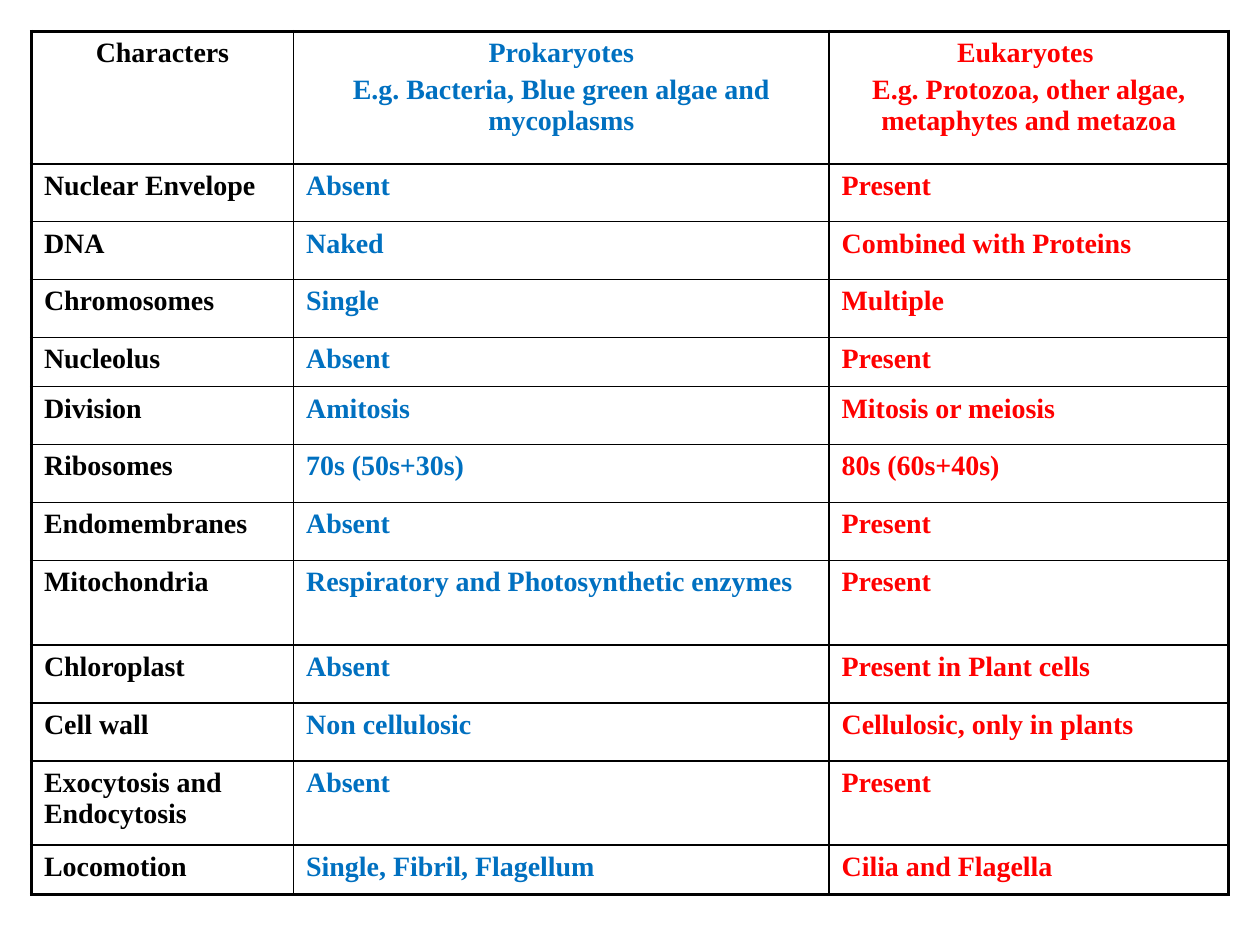
from lxml.etree import SubElement as Sub
from pptx import Presentation
from pptx.dml.color import RGBColor as Rgb
from pptx.enum.text import PP_ALIGN as Align
from pptx.oxml.ns import qn
from pptx.util import Inches, Pt

THEME = {
    "font": "Times New Roman", "size": 16, "gap": 3.2,
    "inks": ["000000", "0070C0", "FF0000"],
    "fill": "FFFFFF", "line": "000000", "thin": 1, "thick": 2.25,
}
SLIDE = (10, 7.5)
EDGE = 0.25
COLS = [2.08, 4.25, 3.17]
HEAD, MID, LOW, TALL = 1.05, 0.46, 0.39, 0.67

ROWS = [
    (HEAD, ["Characters"],
     ["Prokaryotes", "E.g. Bacteria, Blue green algae and mycoplasms"],
     ["Eukaryotes ", "E.g. Protozoa, other algae, metaphytes and metazoa"]),
    (MID, ["Nuclear Envelope"], ["Absent"], ["Present"]),
    (MID, ["DNA"], ["Naked"], ["Combined with Proteins"]),
    (MID, ["Chromosomes"], ["Single"], ["Multiple"]),
    (LOW, ["Nucleolus"], ["Absent"], ["Present"]),
    (MID, ["Division"], ["Amitosis"], ["Mitosis or meiosis"]),
    (MID, ["Ribosomes"], ["70s (50s+30s)"], ["80s (60s+40s)"]),
    (MID, ["Endomembranes"], ["Absent"], ["Present"]),
    (TALL, ["Mitochondria"], ["Respiratory and Photosynthetic enzymes"],
     ["Present"]),
    (MID, ["Chloroplast"], ["Absent"], ["Present in Plant cells"]),
    (MID, ["Cell wall"], ["Non cellulosic"], ["Cellulosic, only in plants"]),
    (TALL, ["Exocytosis and Endocytosis"], ["Absent"], ["Present"]),
    (LOW, ["Locomotion"], ["Single, Fibril, Flagellum"],
     ["Cilia and Flagella"]),
]


def write(cell, paras, ink, align):
    frame = cell.text_frame
    for i, text in enumerate(paras):
        para = frame.add_paragraph() if i else frame.paragraphs[0]
        para.alignment = align
        if i:
            para.space_before = Pt(THEME["gap"])
        run = para.add_run()
        run.text = text
        run.font.name = THEME["font"]
        run.font.size = Pt(THEME["size"])
        run.font.bold = True
        run.font.color.rgb = Rgb.from_string(ink)


def border(cell, outer):
    props = cell._tc.get_or_add_tcPr()
    for i, (side, thick) in enumerate(outer.items()):
        width = Pt(THEME["thick" if thick else "thin"])
        line = Sub(props, qn(f"a:ln{side}"), w=str(width))
        fill = Sub(line, qn("a:solidFill"))
        Sub(fill, qn("a:srgbClr"), val=THEME["line"])
        props.insert(i, line)


def main():
    deck = Presentation()
    deck.slide_width, deck.slide_height = map(Inches, SLIDE)
    slide = deck.slides.add_slide(deck.slide_layouts[6])
    high = sum(row[0] for row in ROWS)
    box = map(Inches, (EDGE, EDGE, sum(COLS), high))
    table = slide.shapes.add_table(len(ROWS), len(COLS), *box).table
    table.first_row = table.horz_banding = False
    for col, width in zip(table.columns, COLS):
        col.width = Inches(width)
    for r, (height, *cells) in enumerate(ROWS):
        table.rows[r].height = Inches(height)
        for c, paras in enumerate(cells):
            cell = table.cell(r, c)
            cell.fill.solid()
            cell.fill.fore_color.rgb = Rgb.from_string(THEME["fill"])
            align = Align.LEFT if r else Align.CENTER
            write(cell, paras, THEME["inks"][c], align)
            border(cell, {"L": c == 0, "R": c == len(COLS) - 1,
                          "T": r == 0, "B": r == len(ROWS) - 1})
    deck.save("out.pptx")


if __name__ == "__main__":
    main()
